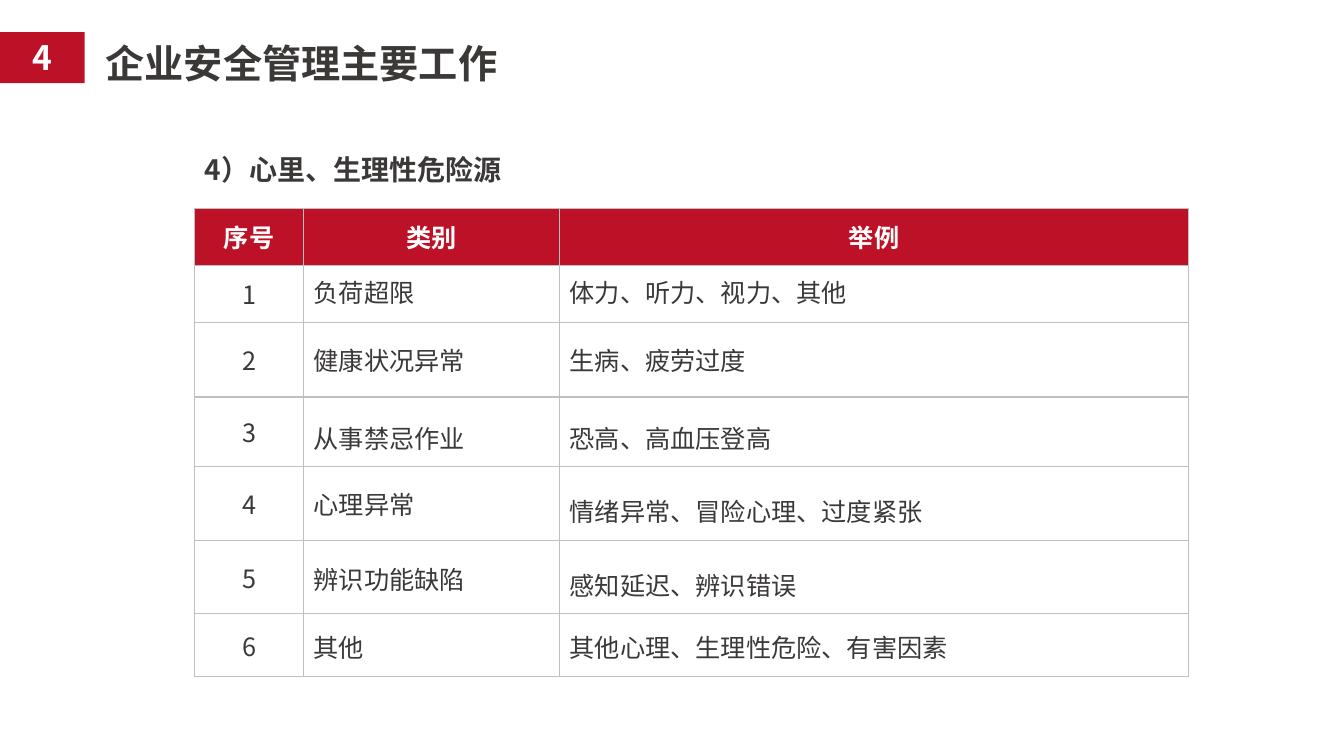
from lxml import etree
from pptx import Presentation
from pptx.dml.color import RGBColor
from pptx.enum.shapes import MSO_SHAPE
from pptx.enum.text import MSO_ANCHOR, PP_ALIGN
from pptx.oxml.ns import qn
from pptx.util import Inches, Pt

RECTANGLE = MSO_SHAPE.RECTANGLE
TOP, MIDDLE = MSO_ANCHOR.TOP, MSO_ANCHOR.MIDDLE
LEFT, CENTER = PP_ALIGN.LEFT, PP_ALIGN.CENTER

FONT = "Noto Sans CJK SC"
COLORS = {"red": "BD1127", "ink": "3B3838", "white": "FFFFFF", "rule": "BFBFBF"}
SLIDE_W, SLIDE_H = Inches(13.33), Inches(7.5)

HEADINGS = ("序号", "类别", "举例")
HAZARDS = [
    ("负荷超限", "体力、听力、视力、其他"),
    ("健康状况异常", "生病、疲劳过度"),
    ("从事禁忌作业", "恐高、高血压登高"),
    ("心理异常", "情绪异常、冒险心理、过度紧张"),
    ("辨识功能缺陷", "感知延迟、辨识错误"),
    ("其他", "其他心理、生理性危险、有害因素"),
]
# Line spacing of the category and the example in each hazard row
LINE_SPACING = [(0.8, 0.8), (None, None), (1.3, 1.3), (None, 1.4), (1.1, 1.4), (1.1, 1.1)]
UNSPACED_ROW = 3
COLUMN_WEIGHTS = (1.08, 2.54, 6.24)
ROW_WEIGHTS = (0.56, 0.57, 0.74, 0.69, 0.73, 0.73, 0.62)


def rgb(name):
    return RGBColor.from_string(COLORS[name])


def share_box(left, top, width, height):
    """Turn percentages of the slide's size into a box."""
    return (int(SLIDE_W * left / 100), int(SLIDE_H * top / 100),
            int(SLIDE_W * width / 100), int(SLIDE_H * height / 100))


def write(frame, text, size, color, bold=False, align=LEFT, before=None, spacing=None):
    paragraph = frame.paragraphs[0]
    paragraph.alignment = align
    if before is not None:
        paragraph.space_before = Pt(before)
    if spacing is not None:
        paragraph.line_spacing = spacing
    run = paragraph.add_run()
    run.text = text
    run.font.size, run.font.bold, run.font.name = Pt(size), bold, FONT
    run.font.color.rgb = rgb(color)
    latin = run.font._element.find(qn("a:latin"))
    east_asian = etree.Element(qn("a:ea"), typeface=FONT)
    latin.addnext(east_asian)


def add_heading(slide, box, text, size, anchor):
    frame = slide.shapes.add_textbox(*box).text_frame
    frame.word_wrap = True
    frame.vertical_anchor = anchor
    write(frame, text, size, "ink", bold=True)


def add_section_badge(slide, box, number):
    badge = slide.shapes.add_shape(RECTANGLE, *box)
    badge.shadow.inherit = False
    badge.fill.solid()
    badge.fill.fore_color.rgb = rgb("red")
    badge.line.fill.background()
    badge.text_frame.vertical_anchor = TOP
    write(badge.text_frame, number, 24, "white", bold=True, align=CENTER)


def style_cell(cell, fill):
    properties = cell._tc.get_or_add_tcPr()
    for side in ("lnL", "lnR", "lnT", "lnB"):
        border = etree.SubElement(properties, qn(f"a:{side}"), w=str(Pt(1)))
        solid = etree.SubElement(border, qn("a:solidFill"))
        etree.SubElement(solid, qn("a:srgbClr"), val=COLORS["rule"])
    cell.fill.solid()
    cell.fill.fore_color.rgb = rgb(fill)
    cell.vertical_anchor = MIDDLE


def add_hazard_table(slide, box):
    rows = [HEADINGS] + [(str(n), *hazard) for n, hazard in enumerate(HAZARDS, 1)]
    table = slide.shapes.add_table(len(rows), len(HEADINGS), *box).table
    table.horz_banding = False
    for column, weight in zip(table.columns, COLUMN_WEIGHTS):
        column.width = int(box[2] * weight / sum(COLUMN_WEIGHTS))
    for row, weight in zip(table.rows, ROW_WEIGHTS):
        row.height = int(box[3] * weight / sum(ROW_WEIGHTS))
    for r, texts in enumerate(rows):
        for c, text in enumerate(texts):
            cell = table.cell(r, c)
            is_header, is_number = r == 0, c == 0
            style_cell(cell, "red" if is_header else "white")
            write(cell.text_frame, text, 18, "white" if is_header else "ink",
                  bold=is_header,
                  align=CENTER if is_header or is_number else LEFT,
                  before=0 if r == UNSPACED_ROW and not is_number else 3.6,
                  spacing=None if is_header or is_number else LINE_SPACING[r - 1][c - 1])


def main():
    deck = Presentation()
    deck.slide_width, deck.slide_height = SLIDE_W, SLIDE_H
    slide = deck.slides.add_slide(deck.slide_layouts[6])
    add_heading(slide, share_box(7.13, 4.53, 35.33, 7.6), "企业安全管理主要工作", 28, TOP)
    add_section_badge(slide, share_box(0, 4.27, 6.3, 6.73), "4")
    add_heading(slide, share_box(14.48, 18.8, 25.43, 7.2), "4）心里、生理性危险源", 20, MIDDLE)
    add_hazard_table(slide, share_box(14.48, 27.6, 73.97, 61.87))
    deck.save("out.pptx")


if __name__ == "__main__":
    main()
